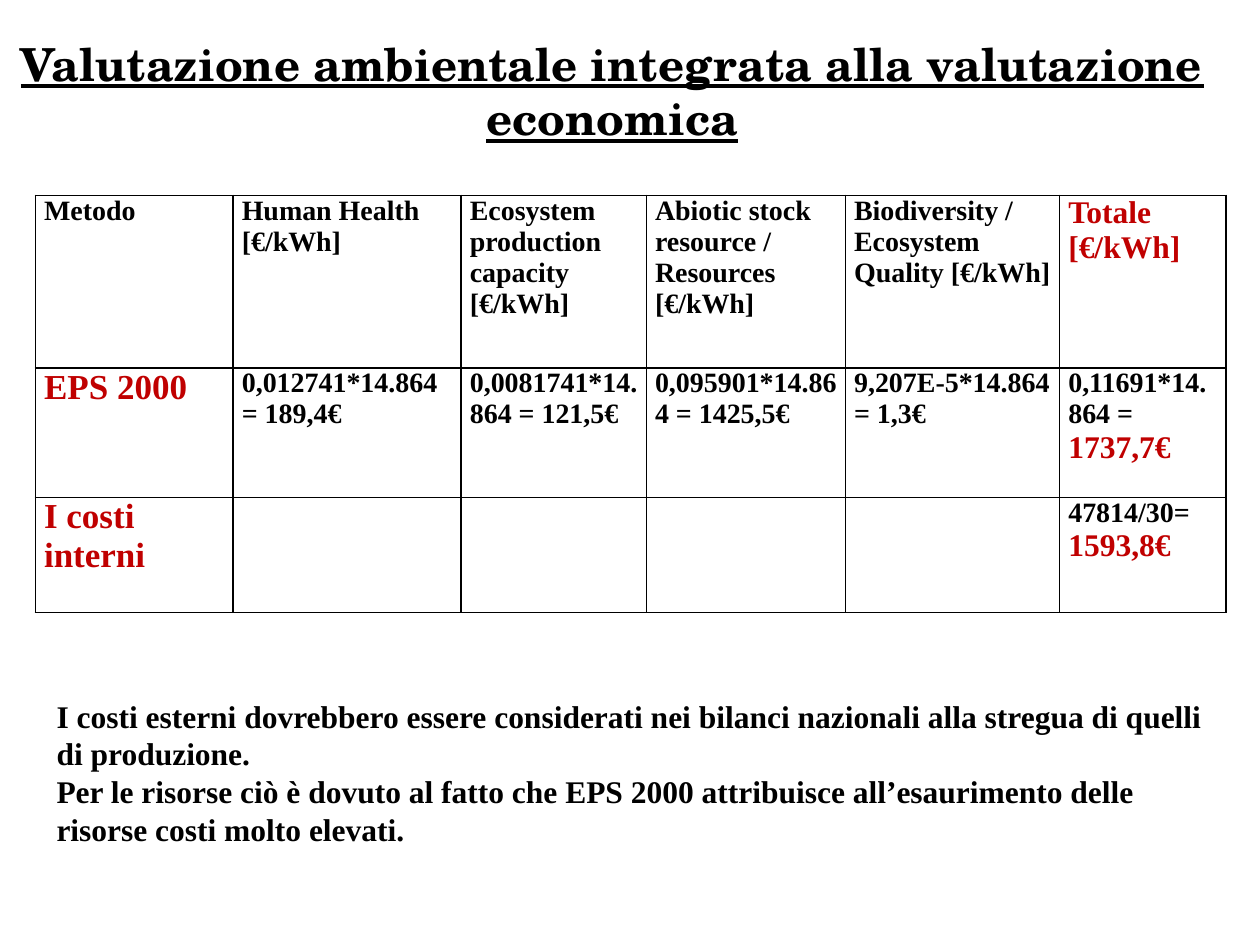
import dataclasses

import pptx
import pptx.dml.color
import pptx.enum.text
import pptx.oxml
import pptx.oxml.ns
import pptx.util

Inches = pptx.util.Inches
Pt = pptx.util.Pt
RGB = pptx.dml.color.RGBColor.from_string


@dataclasses.dataclass(frozen=True)
class Theme:
    black: str = "000000"
    red: str = "C00000"
    white: str = "FFFFFF"
    serif: str = "Times New Roman"
    display: str = "TeX Gyre Schola"
    title: int = 26
    label: int = 20
    total: int = 18
    cell: int = 16
    note: int = 18


THEME = Theme()
PLAIN = {"size": THEME.cell, "color": THEME.black}
TOTAL = {"size": THEME.total, "color": THEME.red}
LABEL = {"size": THEME.label, "color": THEME.red}
NOTE = {"size": THEME.note, "color": THEME.black}

COLS = (1.57, 1.81, 1.47, 1.58, 1.7, 1.32)
ROWS = (1.37, 1.03, 0.91)

# Each cell is a list of paragraphs, each paragraph a list of (text, format) runs.
HEAD = [
    [[("Metodo", PLAIN)]],
    [[("Human Health", PLAIN)], [("[€/kWh]", PLAIN)]],
    [[("Ecosystem production capacity [€/kWh]", PLAIN)]],
    [[("Abiotic stock resource /", PLAIN)], [("Resources [€/kWh]", PLAIN)]],
    [[("Biodiversity /", PLAIN)], [("Ecosystem Quality [€/kWh]", PLAIN)]],
    [[("Totale [€/kWh]", TOTAL)]],
]
COSTS = [
    [[("EPS 2000", LABEL)]],
    [[("0,012741*14.864 = 189,4€", PLAIN)]],
    [[("0,0081741*14.864 = 121,5€", PLAIN)]],
    [[("0,095901*14.864 = 1425,5€", PLAIN)]],
    [[("9,207E-5*14.864 = 1,3€", PLAIN)]],
    [[("0,11691*14.864 = ", PLAIN), ("1737,7€", TOTAL)]],
]
INNER = [
    [[("I costi interni", LABEL)]],
    [], [], [], [],
    [[("47814/30= ", PLAIN), ("1593,8€", TOTAL)]],
]
NOTES = [
    [("I costi esterni dovrebbero essere considerati nei bilanci nazionali "
      "alla stregua di quelli di produzione.", NOTE)],
    [("Per le risorse ciò è dovuto al fatto che EPS 2000 attribuisce "
      "all’esaurimento delle risorse costi molto elevati.", NOTE)],
]


def style(font, size, color, name=THEME.serif, underline=None):
    values = {"size": Pt(size), "name": name, "bold": True,
              "underline": underline}
    for key, value in values.items():
        setattr(font, key, value)
    font.color.rgb = RGB(color)


def write(frame, paras):
    for i, runs in enumerate(paras):
        para = frame.add_paragraph() if i else frame.paragraphs[0]
        for text, form in runs:
            run = para.add_run()
            run.text = text
            style(run.font, **form)


def place(shape, box):
    for key, value in zip(("left", "top", "width", "height"), box):
        setattr(shape, key, Inches(value))


def border(cell):
    """Draw a thin line on all four sides; call before filling the cell."""
    props = cell._tc.get_or_add_tcPr()
    for side in ("lnL", "lnR", "lnT", "lnB"):
        props.append(pptx.oxml.parse_xml(
            f'<a:{side} {pptx.oxml.ns.nsdecls("a")} w="{Pt(1)}">'
            f'<a:solidFill><a:srgbClr val="{THEME.black}"/></a:solidFill>'
            f'</a:{side}>'))


def add_title(slide, box):
    title = slide.shapes.title
    place(title, box)
    frame = title.text_frame
    frame.auto_size = pptx.enum.text.MSO_AUTO_SIZE.NONE
    frame.vertical_anchor = pptx.enum.text.MSO_ANCHOR.BOTTOM
    write(frame, [[("Valutazione ambientale integrata alla valutazione economica",
                    {"size": THEME.title, "color": THEME.black,
                     "name": THEME.display, "underline": True})]])
    frame.paragraphs[0].alignment = pptx.enum.text.PP_ALIGN.CENTER


def add_costs(slide, box):
    data = [HEAD, COSTS, INNER]
    table = slide.shapes.add_table(
        len(ROWS), len(COLS), *map(Inches, box)).table
    table.first_row = table.horz_banding = False
    for col, width in zip(table.columns, COLS):
        col.width = Inches(width)
    for row, height, items in zip(table.rows, ROWS, data):
        row.height = Inches(height)
        for cell, paras in zip(row.cells, items):
            cell.margin_left = cell.margin_right = Inches(0.07)
            cell.margin_top = cell.margin_bottom = 0
            border(cell)
            cell.fill.solid()
            cell.fill.fore_color.rgb = RGB(THEME.white)
            write(cell.text_frame, paras)


def add_notes(slide, box):
    frame = slide.shapes.add_textbox(*map(Inches, box)).text_frame
    frame.word_wrap = True
    frame.auto_size = pptx.enum.text.MSO_AUTO_SIZE.SHAPE_TO_FIT_TEXT
    write(frame, NOTES)


def main():
    deck = pptx.Presentation()
    deck.slide_width, deck.slide_height = Inches(10), Inches(7.5)
    slide = deck.slides.add_slide(deck.slide_layouts.get_by_name("Title Only"))
    add_title(slide, (0, 0.29, 9.72, 0.91))
    add_costs(slide, (0.28, 1.55, sum(COLS), sum(ROWS)))
    add_notes(slide, (0.35, 5.48, 9.31, 1.31))
    deck.save("out.pptx")


if __name__ == "__main__":
    main()
